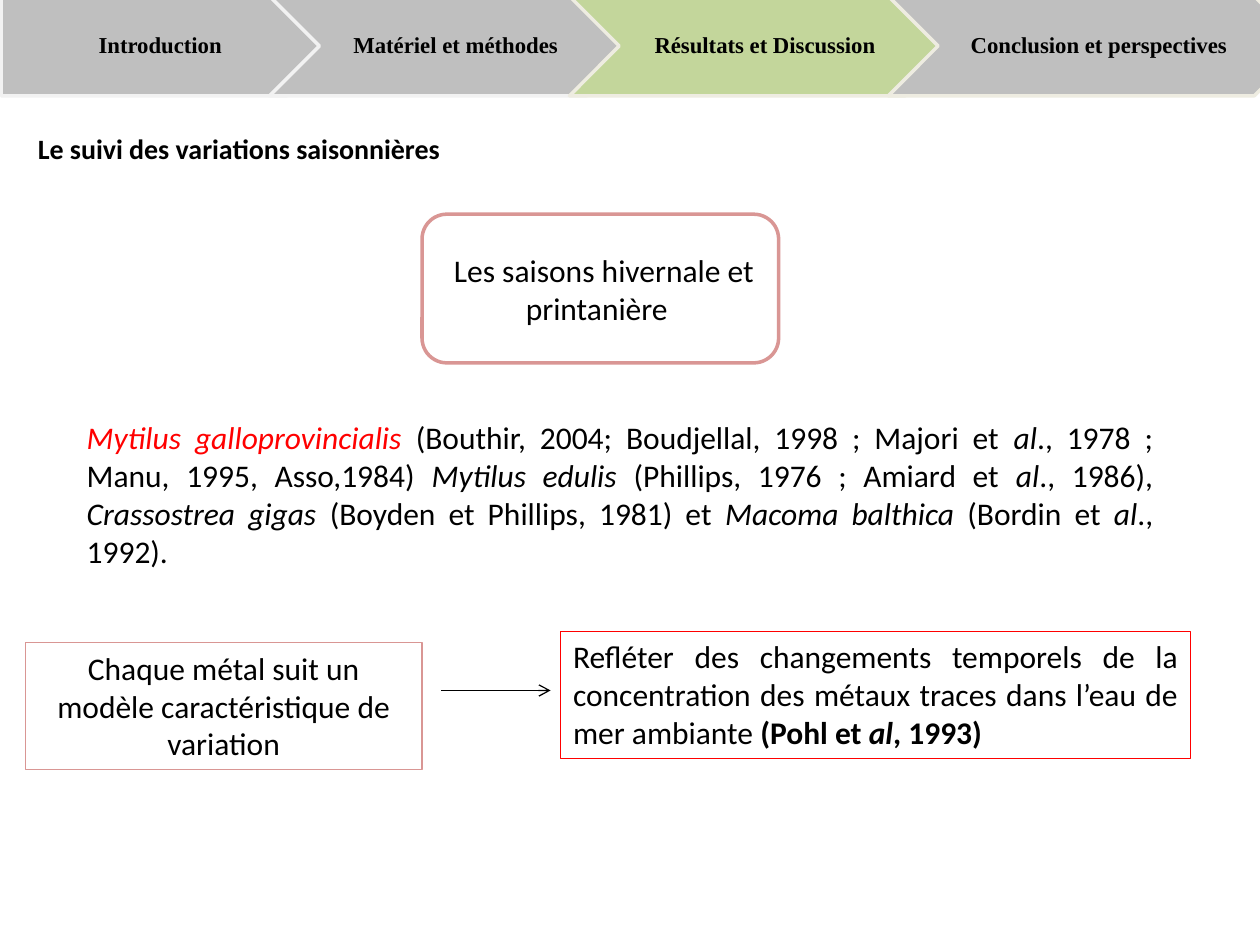
from lxml.etree import SubElement
from pptx import Presentation
from pptx.dml.color import RGBColor
from pptx.enum.shapes import MSO_CONNECTOR as Link, MSO_SHAPE as Shape
from pptx.enum.text import MSO_ANCHOR as Anchor, PP_ALIGN as Align
from pptx.oxml.ns import qn
from pptx.util import Inches, Pt

HUES = {"black": "000000", "white": "FFFFFF", "red": "FF0000",
        "rose": "D99694", "grey": "BFBFBF", "green": "C3D69B",
        "pale": "F2F2F2", "cream": "EEECE1"}
BODY = {"name": "Calibri", "size": Pt(18)}
HEAD = {"name": "Calibri", "size": Pt(16), "bold": True}
STEP = {"name": "Times New Roman", "size": Pt(13), "bold": True}
ITAL = {"italic": True}
BOLD = {"bold": True}

STEPS = [("Introduction", 2.66, "grey", "pale"),
         ("Matériel et méthodes", 2.91, "grey", "pale"),
         ("Résultats et Discussion", 3.06, "green", "cream"),
         ("Conclusion et perspectives", 3.3, "grey", "cream")]
STUDIES = [("Mytilus galloprovincialis ", {"italic": True, "hue": "red"}),
           ("(Bouthir, 2004; Boudjellal, 1998 ; Majori et ", {}),
           ("al", ITAL),
           ("., 1978 ; Manu, 1995, Asso,1984) ", {}),
           ("Mytilus edulis ", ITAL),
           ("(Phillips, 1976 ; Amiard et ", {}),
           ("al", ITAL),
           ("., 1986), ", {}),
           ("Crassostrea gigas ", ITAL),
           ("(Boyden et Phillips, 1981) et ", {}),
           ("Macoma balthica ", ITAL),
           ("(Bordin et ", {}),
           ("al", ITAL),
           ("., 1992). ", {})]
EFFECT = [("Refléter des changements temporels de la concentration "
           "des métaux traces dans l’eau de mer ambiante ", {}),
          ("(Pohl et ", BOLD),
          ("al", {"bold": True, "italic": True}),
          (", 1993)", BOLD)]


def rgb(hue):
    return RGBColor.from_string(HUES[hue])


def write(frame, runs, base, align=Align.CENTER, anchor=Anchor.TOP):
    """Fill the frame with one paragraph of (text, format) runs."""
    frame.word_wrap = True
    frame.vertical_anchor = anchor
    para = frame.paragraphs[0]
    para.alignment = align
    for text, extra in runs:
        run = para.add_run()
        run.text = text
        style = {"hue": "black", **base, **extra}
        run.font.color.rgb = rgb(style.pop("hue"))
        for key, value in style.items():
            setattr(run.font, key, value)
    return para


def draw(shapes, kind, box, line, width, fill=None):
    shape = shapes.add_shape(kind, *map(Inches, box))
    shape.shadow.inherit = False
    shape.line.color.rgb = rgb(line)
    shape.line.width = Pt(width)
    if fill:
        shape.fill.solid()
        shape.fill.fore_color.rgb = rgb(fill)
    else:
        shape.fill.background()
    return shape


def add_steps(slide, left, top, height, lap):
    """Row of arrow steps, each overlapping the one before by lap."""
    group = slide.shapes.add_group_shape()
    for n, (text, width, fill, line) in enumerate(STEPS):
        kind = Shape.CHEVRON if n else Shape.PENTAGON
        step = draw(group.shapes, kind, (left, top, width, height),
                    line, 2, fill)
        frame = step.text_frame
        pads = {"left": 0.06 if n else 0.08, "right": 0.02,
                "top": 0.04, "bottom": 0.04}
        for side, pad in pads.items():
            setattr(frame, f"margin_{side}", Inches(pad))
        para = write(frame, [(text, {})], STEP, anchor=Anchor.MIDDLE)
        para.line_spacing = 0.9
        left += width - lap


def add_heading(slide, box, text):
    title, body = slide.placeholders
    title.element.getparent().remove(title.element)
    body.left, body.top, body.width, body.height = map(Inches, box)
    para = write(body.text_frame, [(text, {})], HEAD, Align.LEFT)
    props = para._p.get_or_add_pPr()
    props.set("marL", "0")
    props.set("indent", "0")
    SubElement(props, qn("a:buNone"))


def add_season(slide, box):
    shape = draw(slide.shapes, Shape.ROUNDED_RECTANGLE, box, "rose", 2)
    write(shape.text_frame, [(" Les saisons hivernale et printanière ", {})],
          BODY, anchor=Anchor.MIDDLE)


def add_studies(slide, box):
    text = slide.shapes.add_textbox(*map(Inches, box))
    write(text.text_frame, STUDIES, BODY, Align.JUSTIFY)


def add_arrow(slide, left, right, y):
    arrow = slide.shapes.add_connector(
        Link.STRAIGHT, *map(Inches, (left, y, right, y)))
    arrow.line.color.rgb = rgb("black")
    arrow.line.width = Pt(0.75)
    SubElement(arrow.line._get_or_add_ln(), qn("a:tailEnd"), type="arrow")
    SubElement(arrow.element.spPr, qn("a:effectLst"))


def add_model(slide, cause, effect):
    """Two framed texts, the first leading to the second."""
    first = draw(slide.shapes, Shape.RECTANGLE, cause, "rose", 0.75, "white")
    write(first.text_frame,
          [("Chaque métal suit un modèle caractéristique de variation", {})],
          BODY)
    add_arrow(slide, cause[0] + cause[2] + 0.15, effect[0] - 0.08, 5.48)
    last = draw(slide.shapes, Shape.RECTANGLE, effect, "red", 0.75)
    write(last.text_frame, EFFECT, BODY, Align.JUSTIFY)


def main():
    deck = Presentation()
    deck.slide_width, deck.slide_height = Inches(10), Inches(7.5)
    slide = deck.slides.add_slide(deck.slide_layouts[1])
    add_heading(slide, (0.2, 0.99, 4.17, 0.53),
                "Le suivi des variations saisonnières")
    add_model(slide, (0.2, 5.1, 3.15, 1.01), (4.45, 5.01, 5, 1.01))
    add_season(slide, (3.35, 1.7, 2.83, 1.18))
    add_studies(slide, (0.59, 3.27, 8.66, 1.31))
    add_steps(slide, 0.01, -0.03, 0.79, 0.53)
    deck.save("out.pptx")


if __name__ == "__main__":
    main()
